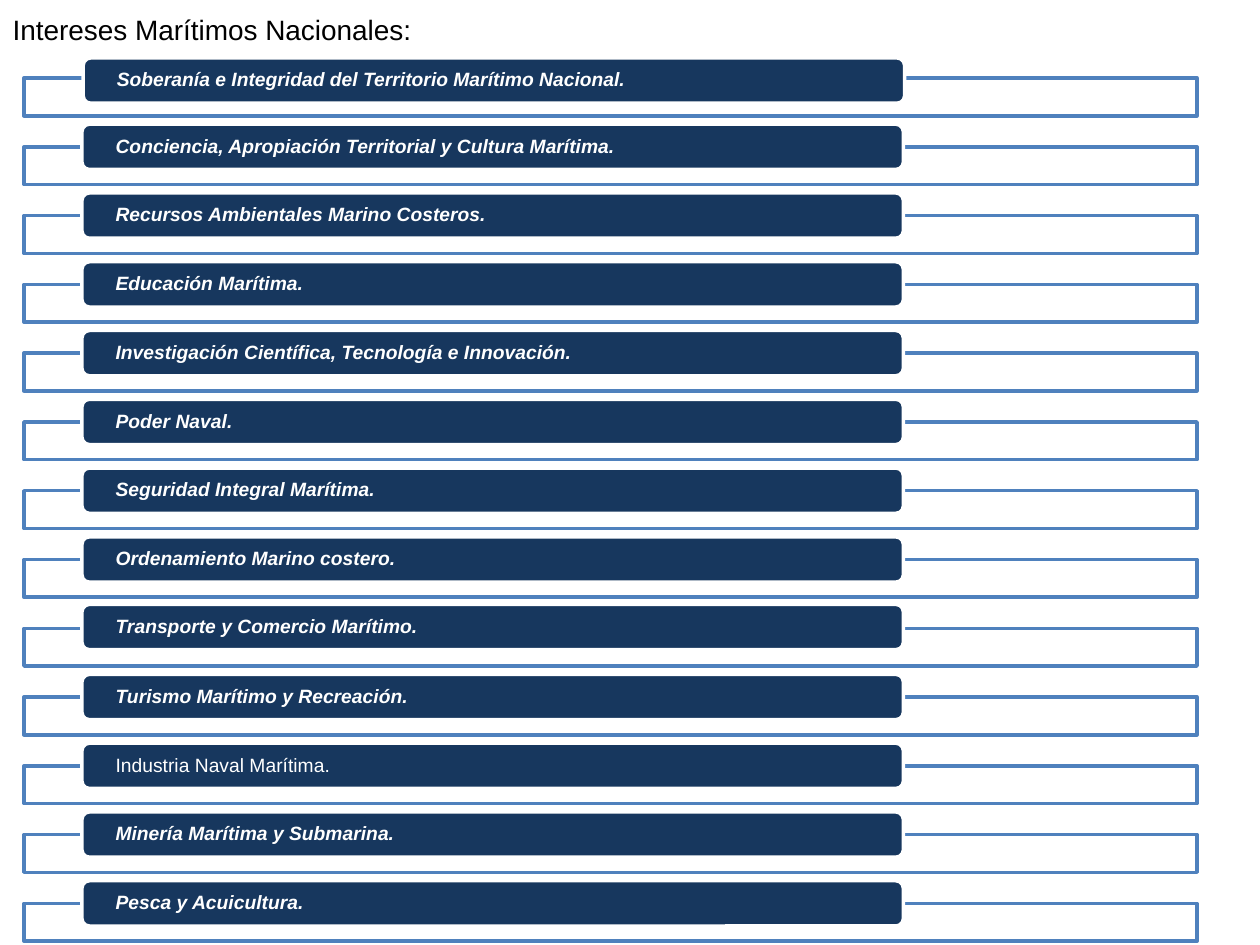
from lxml.etree import SubElement
from pptx import Presentation
from pptx.dml.color import RGBColor
from pptx.enum.shapes import MSO_SHAPE
from pptx.enum.text import MSO_ANCHOR, MSO_AUTO_SIZE, PP_ALIGN
from pptx.oxml.ns import qn
from pptx.util import Inches, Pt

COLOURS = {"white": "FFFFFF", "navy": "17375E", "blue": "4F81BD", "black": "000000"}
FONT = "Arial"

INTERESTS = [
    "Soberanía e Integridad del Territorio Marítimo Nacional.",
    "Conciencia, Apropiación Territorial y Cultura Marítima.",
    "Recursos Ambientales Marino Costeros.",
    "Educación Marítima.",
    "Investigación Científica, Tecnología e Innovación.",
    "Poder Naval.",
    "Seguridad Integral Marítima.",
    "Ordenamiento Marino costero.",
    "Transporte y Comercio Marítimo.",
    "Turismo Marítimo y Recreación.",
    "Industria Naval Marítima.",
    "Minería Marítima y Submarina.",
    "Pesca y Acuicultura.",
]
PLAIN_INTEREST = "Industria Naval Marítima."
FIRST_TOP, LAST_TOP = 0.62, 7.17
BAR_RISE = 0.18
BAR_NUDGES = {0: (0.01, 0.02), 8: (0, -0.01)}


class InterestSlide:
    def __init__(self, presentation):
        self.slide = presentation.slides.add_slide(presentation.slide_layouts[5])

    def add_text(self, paragraph, text, size, colour, emphasis=False):
        run = paragraph.add_run()
        run.text = text
        run.font.name = FONT
        run.font.size = Pt(size)
        run.font.bold = run.font.italic = emphasis
        run.font.color.rgb = RGBColor.from_string(COLOURS[colour])

    def title(self, text):
        heading = self.slide.shapes.title
        heading.left, heading.top = Inches(0), Inches(0.01)
        heading.width, heading.height = Inches(8.42), Inches(0.41)
        frame = heading.text_frame
        frame.word_wrap = True
        frame.auto_size = MSO_AUTO_SIZE.SHAPE_TO_FIT_TEXT
        frame.vertical_anchor = MSO_ANCHOR.TOP
        paragraph = frame.paragraphs[0]
        paragraph.alignment = PP_ALIGN.JUSTIFY
        paragraph.line_spacing = 1.15
        self.add_text(paragraph, text, 16, "black")

    def block(self, kind, left, top, width, height, fill, line):
        block = self.slide.shapes.add_shape(
            kind, Inches(left), Inches(top), Inches(width), Inches(height))
        block.shadow.inherit = False
        block.fill.solid()
        block.fill.fore_color.rgb = RGBColor.from_string(COLOURS[fill])
        block.line.color.rgb = RGBColor.from_string(COLOURS[line])
        block.line.width = Pt(2)
        return block

    def frame(self, top):
        outline = self.block(MSO_SHAPE.RECTANGLE, 0.19, top, 9.31, 0.3, "white", "blue")
        fill_colour = outline.element.spPr.find(qn("a:solidFill"))[0]
        SubElement(fill_colour, qn("a:alpha"), val="90000")

    def bar(self, left, top, text, emphasis):
        bar = self.block(MSO_SHAPE.ROUNDED_RECTANGLE, left, top, 6.52, 0.36, "navy", "white")
        frame = bar.text_frame
        frame.word_wrap = True
        frame.vertical_anchor = MSO_ANCHOR.MIDDLE
        frame.margin_left = frame.margin_right = Inches(0.25)
        frame.margin_top = frame.margin_bottom = 0
        paragraph = frame.paragraphs[0]
        paragraph.alignment = PP_ALIGN.LEFT
        paragraph.line_spacing = 0.9
        self.add_text(paragraph, text, 11, "white", emphasis)


def main():
    presentation = Presentation()
    presentation.slide_width, presentation.slide_height = Inches(10), Inches(7.5)
    page = InterestSlide(presentation)
    page.title("Intereses Marítimos Nacionales:")
    pitch = (LAST_TOP - FIRST_TOP) / (len(INTERESTS) - 1)
    for row, interest in enumerate(INTERESTS):
        top = FIRST_TOP + row * pitch
        shift, drop = BAR_NUDGES.get(row, (0, 0))
        page.frame(top)
        page.bar(0.65 + shift, top - BAR_RISE + drop, interest, interest != PLAIN_INTEREST)
    presentation.save("out.pptx")


if __name__ == "__main__":
    main()
